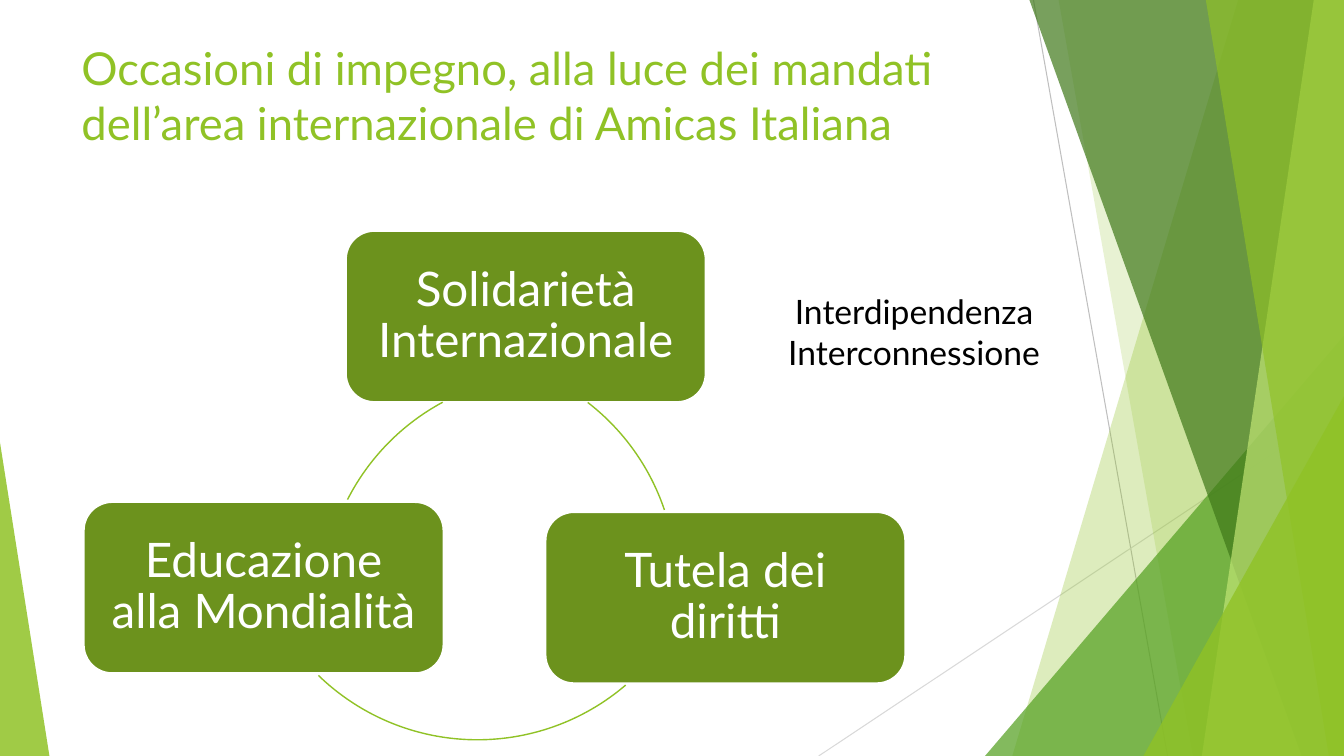
from lxml.etree import SubElement
from pptx import Presentation
from pptx.dml.color import RGBColor
from pptx.enum.shapes import MSO_CONNECTOR, MSO_SHAPE
from pptx.enum.text import MSO_ANCHOR, PP_ALIGN
from pptx.oxml.ns import qn
from pptx.util import Inches, Pt

FONT = "Lato"
WIDTH, HEIGHT = 13.33, 7.5
LIME = RGBColor(0x90, 0xC2, 0x26)
PALE_LIME = RGBColor(0xC0, 0xE4, 0x74)
GREEN = RGBColor(0x54, 0xA0, 0x21)
DARK_GREEN = RGBColor(0x3F, 0x78, 0x19)
OLIVE = RGBColor(0x6C, 0x92, 0x1D)
GRAY = RGBColor(0xBF, 0xBF, 0xBF)
LIGHT_GRAY = RGBColor(0xD9, 0xD9, 0xD9)
WHITE = RGBColor(0xFF, 0xFF, 0xFF)
BLACK = RGBColor(0, 0, 0)


def lengths(*values):
    return [Inches(value) for value in values]


def fill_facet(shape, color, opacity):
    shape.shadow.inherit = False
    shape.line.fill.background()
    shape.fill.solid()
    shape.fill.fore_color.rgb = color
    color_element = shape.fill._xPr.find(qn("a:solidFill"))[0]
    SubElement(color_element, qn("a:alpha"), val=str(opacity * 1000))


def add_hairline(slide, start, end, color):
    line = slide.shapes.add_connector(MSO_CONNECTOR.STRAIGHT, *lengths(*start, *end))
    line.line.color.rgb = color
    line.line.width = Pt(0.75)
    SubElement(line._element.spPr, qn("a:effectLst"))


def add_band(slide, top_x, bottom_x, color, opacity):
    corners = [(top_x, 0), (WIDTH, 0), (WIDTH, HEIGHT), (bottom_x, HEIGHT)]
    points = [lengths(*corner) for corner in corners]
    builder = slide.shapes.build_freeform(*points[0])
    builder.add_line_segments(points[1:], close=True)
    fill_facet(builder.convert_to_shape(), color, opacity)


def add_corner(slide, left, top, width, apex, color, opacity):
    box = lengths(left, top, width, HEIGHT - top)
    triangle = slide.shapes.add_shape(MSO_SHAPE.ISOSCELES_TRIANGLE, *box)
    triangle.adjustments[0] = apex
    fill_facet(triangle, color, opacity)


def add_facets(slide):
    add_hairline(slide, (10.25, 0), (11.58, HEIGHT), GRAY)
    add_hairline(slide, (WIDTH, 4.03), (8.12, HEIGHT), LIGHT_GRAY)
    add_band(slide, 12.28, 10.04, LIME, 30)
    add_band(slide, 10.5, 11.83, LIME, 20)
    add_corner(slide, 9.77, 3.33, 3.56, 1, GREEN, 72)
    add_band(slide, 10.21, 12.91, DARK_GREEN, 70)
    add_band(slide, 13.03, 11.92, PALE_LIME, 70)
    add_band(slide, 11.96, 13.18, LIME, 65)
    add_corner(slide, 11.34, 3.93, 1.99, 1, LIME, 80)
    add_corner(slide, 0, 4.39, 0.49, 0, LIME, 85)


def write(text_frame, lines, size, color, alignment, spacing=1.0):
    text_frame.text = "\n".join(lines)
    for paragraph in text_frame.paragraphs:
        paragraph.alignment = alignment
        paragraph.line_spacing = spacing
        paragraph.font.name = FONT
        paragraph.font.size = Pt(size)
        paragraph.font.color.rgb = color


def add_text(slide, box, lines, size, color, alignment, wrap):
    text_frame = slide.shapes.add_textbox(*lengths(*box)).text_frame
    text_frame.word_wrap = wrap
    write(text_frame, lines, size, color, alignment)


def add_node(slide, left, top, text):
    box = lengths(left, top, 3.57, 1.7)
    node = slide.shapes.add_shape(MSO_SHAPE.ROUNDED_RECTANGLE, *box)
    node.shadow.inherit = False
    node.fill.solid()
    node.fill.fore_color.rgb = OLIVE
    node.line.color.rgb = WHITE
    node.line.width = Pt(1.5)
    text_frame = node.text_frame
    text_frame.word_wrap = True
    text_frame.vertical_anchor = MSO_ANCHOR.MIDDLE
    text_frame.margin_left = text_frame.margin_right = Inches(0.17)
    text_frame.margin_top = text_frame.margin_bottom = Inches(0.17)
    write(text_frame, [text], 34, WHITE, PP_ALIGN.CENTER, 0.9)


def add_arc(slide, left, top, start_degrees, end_degrees):
    diameter = 4.53
    arc = slide.shapes.add_shape(MSO_SHAPE.ARC, *lengths(left, top, diameter, diameter))
    arc.adjustments[0] = start_degrees * 0.6
    arc.adjustments[1] = end_degrees * 0.6
    arc.shadow.inherit = False
    arc.fill.background()
    arc.line.color.rgb = LIME
    arc.line.width = Pt(1)


def add_cycle(slide, left, top):
    nodes = [
        (2.6, 0, "Solidarietà Internazionale"),
        (4.58, 2.79, "Tutela dei diritti"),
        (0, 2.69, "Educazione alla Mondialità"),
    ]
    arcs = [(1.35, 1.23, 307.7, 341.3), (1.64, 0.52, 49.5, 134.1), (2.37, 1.43, 207, 241.7)]
    for (node_x, node_y, text), (arc_x, arc_y, start, end) in zip(nodes, arcs):
        add_node(slide, left + node_x, top + node_y, text)
        add_arc(slide, left + arc_x, top + arc_y, start, end)


def main():
    presentation = Presentation()
    presentation.slide_width, presentation.slide_height = lengths(WIDTH, HEIGHT)
    slide = presentation.slides.add_slide(presentation.slide_layouts[6])
    add_facets(slide)
    title = "Occasioni di impegno, alla luce dei mandati dell’area internazionale di Amicas Italiana"
    add_text(slide, (0.71, 0.35, 9.4, 1.44), [title], 32.4, LIME, PP_ALIGN.LEFT, True)
    add_cycle(slide, 0.83, 2.29)
    themes = ["Interdipendenza", "Interconnessione"]
    add_text(slide, (7.69, 2.84, 2.75, 0.91), themes, 24, BLACK, PP_ALIGN.CENTER, False)
    presentation.save("out.pptx")


if __name__ == "__main__":
    main()
